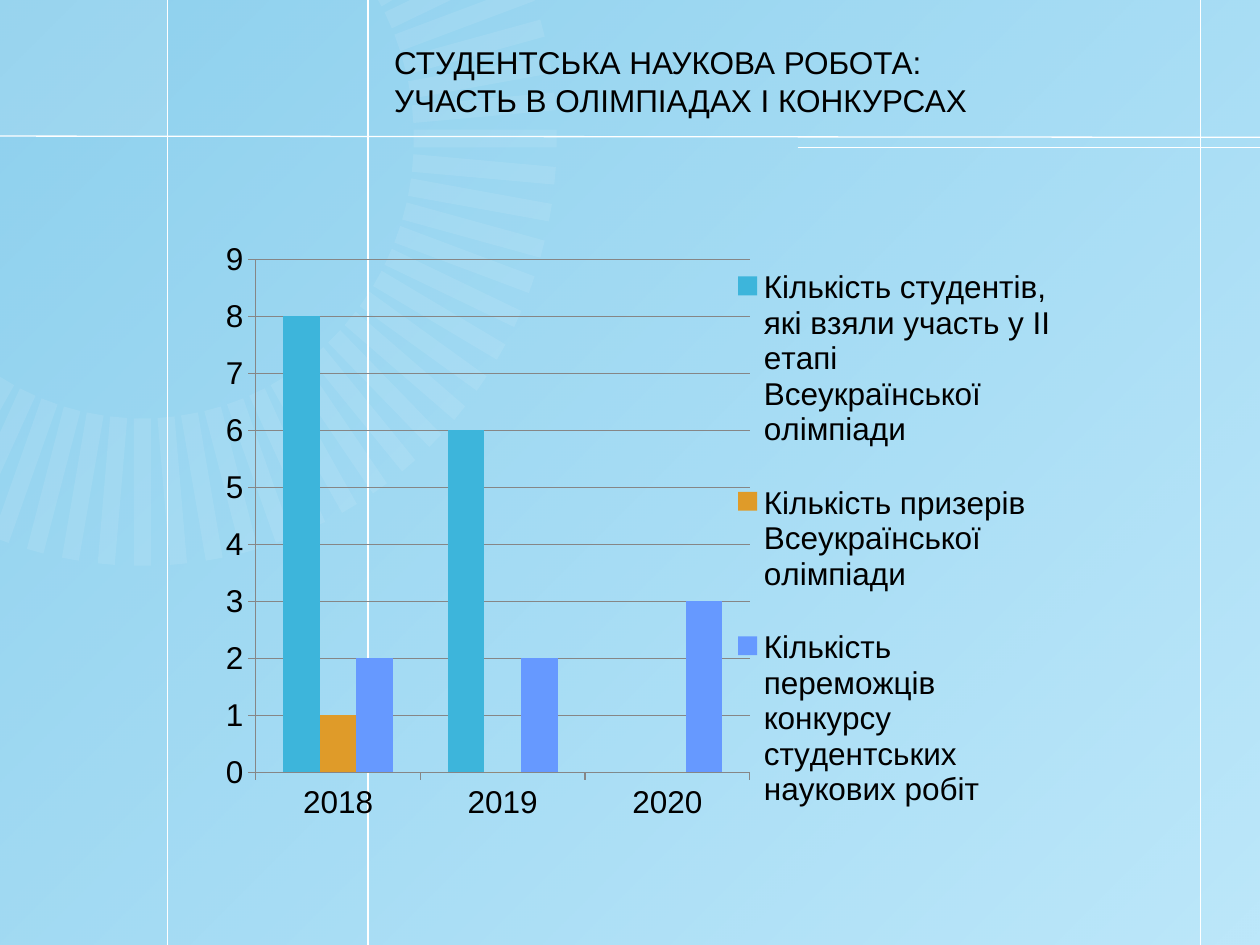
"""Build the slide on student olympiads and contests: rays, guide lines, title and column chart."""
from dataclasses import dataclass
from math import cos, radians, sin

from lxml import etree
from pptx import Presentation
from pptx import util as u
from pptx.chart.data import CategoryChartData
from pptx.dml.color import RGBColor
from pptx.enum import chart as ch
from pptx.enum import shapes as sh
from pptx.oxml import parse_xml
from pptx.oxml.ns import nsdecls, qn

Point = tuple[float, float]


@dataclass(frozen=True)
class Theme:
    sky: str = "BCE7FA"
    shade: str = "0F92CC"
    white: str = "FFFFFF"
    ray: str = "F2FAFE"
    ink: str = "000000"
    grid: str = "868686"
    font: str = "Arial"
    size: float = 18
    hairline: float = 0.75
    veil: int = 10


@dataclass(frozen=True)
class Guide:
    start: Point
    end: Point


@dataclass(frozen=True)
class Sunburst:
    center: Point = (1.13, 1.1)
    inner: float = 2.22
    outer: float = 3.39
    half_width: float = 0.07
    squeeze: float = 0.97
    angles: range = range(-30, 121, 5)


@dataclass(frozen=True)
class Measure:
    name: str
    counts: tuple[int, ...]
    color: str


@dataclass(frozen=True)
class Box:
    left: float
    top: float
    width: float
    height: float

    def lengths(self) -> list[int]:
        return [u.Inches(v) for v in (self.left, self.top, self.width, self.height)]


THEME = Theme()
WIDTH, HEIGHT = 10, 7.5
TITLE = "СТУДЕНТСЬКА НАУКОВА РОБОТА: УЧАСТЬ В ОЛІМПІАДАХ І КОНКУРСАХ"
TITLE_BOX = Box(3.03, 0.29, 5, 0.71)
CHART_BOX = Box(1.59, 1.84, 6.92, 4.97)
PLOT_BOX = Box(0.44, 0.22, 3.92, 4.07)
LEGEND_BOX = Box(4.35, 0, 2.49, 4.87)
GUIDES = [Guide((x, 0), (x, HEIGHT)) for x in (1.33, 9.53, 2.92)] + [
    Guide((0, 1.08), (WIDTH, 1.09)),
    Guide((6.33, 1.17), (WIDTH, 1.17)),
]
YEARS = ("2018", "2019", "2020")
MEASURES = (
    Measure("Кількість студентів, які взяли участь у ІІ етапі Всеукраїнської олімпіади", (8, 6, 0), "3DB5DB"),
    Measure("Кількість призерів Всеукраїнської олімпіади", (1, 0, 0), "DF9B29"),
    Measure("Кількість переможців конкурсу студентських наукових робіт", (2, 2, 3), "6699FF"),
)


def rgb(code: str) -> RGBColor:
    return RGBColor.from_string(code)


def set_alpha(color_element, percent: int) -> None:
    etree.SubElement(color_element, qn("a:alpha")).set("val", str(percent * 1000))


def style_veil(shape, color: str) -> None:
    shape.shadow.inherit = False
    shape.line.fill.background()
    shape.fill.solid()
    shape.fill.fore_color.rgb = rgb(color)
    for element in shape.fill._xPr.iter(qn("a:srgbClr")):
        set_alpha(element, THEME.veil)


def add_rect(slide, width: float, height: float):
    return slide.shapes.add_shape(sh.MSO_SHAPE.RECTANGLE, 0, 0, u.Inches(width), u.Inches(height))


def add_backdrop(slide) -> None:
    slide.background.fill.solid()
    slide.background.fill.fore_color.rgb = rgb(THEME.sky)
    shade = add_rect(slide, WIDTH, HEIGHT)
    shade.shadow.inherit = False
    shade.line.fill.background()
    shade.fill.gradient()
    shade.fill.gradient_angle = 315
    for stop in shade.fill.gradient_stops:
        stop.color.rgb = rgb(THEME.shade)
    for element, percent in zip(shade.fill._xPr.iter(qn("a:srgbClr")), (27, 0)):
        set_alpha(element, percent)
    style_veil(add_rect(slide, 1.33, 1.08), THEME.white)


def add_guide(slide, guide: Guide) -> None:
    ends = [u.Inches(v) for v in (*guide.start, *guide.end)]
    line = slide.shapes.add_connector(sh.MSO_CONNECTOR.STRAIGHT, *ends)
    line.line.color.rgb = rgb(THEME.white)
    line.line.width = u.Pt(THEME.hairline)
    etree.SubElement(line._element.spPr, qn("a:effectLst"))


def clip(outline: list[Point], axis: int) -> list[Point]:
    kept = []
    for a, b in zip(outline, outline[1:] + outline[:1]):
        if a[axis] >= 0:
            kept.append(a)
        if (a[axis] >= 0) != (b[axis] >= 0):
            t = a[axis] / (a[axis] - b[axis])
            kept.append((a[0] + t * (b[0] - a[0]), a[1] + t * (b[1] - a[1])))
    return kept


def add_ray(slide, burst: Sunburst, angle: int) -> None:
    c, s, w = cos(radians(angle)), sin(radians(angle)), burst.half_width
    corners = ((burst.inner, -w), (burst.outer, -w), (burst.outer, w), (burst.inner, w))
    outline = [
        (burst.center[0] + burst.squeeze * (r * c - d * s), burst.center[1] + r * s + d * c)
        for r, d in corners
    ]
    points = [(u.Inches(x), u.Inches(y)) for x, y in clip(clip(outline, 0), 1)]
    builder = slide.shapes.build_freeform(*points[0])
    builder.add_line_segments(points[1:], close=True)
    style_veil(builder.convert_to_shape(), THEME.ray)


def set_layout(parent, position: int, box: Box, target: str = "") -> None:
    for old in parent.findall(qn("c:layout")):
        parent.remove(old)
    shares = (box.left / CHART_BOX.width, box.top / CHART_BOX.height,
              box.width / CHART_BOX.width, box.height / CHART_BOX.height)
    modes = '<c:xMode val="edge"/><c:yMode val="edge"/>'
    values = "".join(f'<c:{k} val="{v:.4f}"/>' for k, v in zip("xywh", shares))
    parent.insert(position, parse_xml(
        f'<c:layout {nsdecls("c")}><c:manualLayout>{target}{modes}{values}</c:manualLayout></c:layout>'
    ))


def style_line(line) -> None:
    line.color.rgb = rgb(THEME.grid)
    line.width = u.Pt(THEME.hairline)


def style_font(font) -> None:
    font.name = THEME.font
    font.size = u.Pt(THEME.size)
    font.color.rgb = rgb(THEME.ink)


def add_results_chart(slide) -> None:
    data = CategoryChartData()
    data.categories = YEARS
    for measure in MEASURES:
        data.add_series(measure.name, measure.counts)
    chart = slide.shapes.add_chart(ch.XL_CHART_TYPE.COLUMN_CLUSTERED, *CHART_BOX.lengths(), data).chart
    style_font(chart.font)
    chart.has_title = False
    plot = chart.plots[0]
    plot.vary_by_categories = False
    plot.gap_width, plot.overlap = 150, 0
    for series, measure in zip(plot.series, MEASURES):
        series.format.fill.solid()
        series.format.fill.fore_color.rgb = rgb(measure.color)
    for axis in (chart.category_axis, chart.value_axis):
        axis.major_tick_mark = ch.XL_TICK_MARK.OUTSIDE
        style_line(axis.format.line)
    counts = chart.value_axis
    counts.minimum_scale, counts.maximum_scale, counts.major_unit = 0, 9, 1
    style_line(counts.major_gridlines.format.line)
    chart.has_legend = True
    chart.legend.position = ch.XL_LEGEND_POSITION.RIGHT
    chart.legend.include_in_layout = False
    set_layout(chart.legend._element, 1, LEGEND_BOX)
    set_layout(chart._chartSpace.chart.plotArea, 0, PLOT_BOX, '<c:layoutTarget val="inner"/>')


def add_title(slide) -> None:
    frame = slide.shapes.add_textbox(*TITLE_BOX.lengths()).text_frame
    frame.word_wrap = True
    frame.text = TITLE
    style_font(frame.paragraphs[0].font)


def main() -> None:
    deck = Presentation()
    deck.slide_width, deck.slide_height = u.Inches(WIDTH), u.Inches(HEIGHT)
    slide = deck.slides.add_slide(deck.slide_layouts[6])
    add_backdrop(slide)
    for guide in GUIDES:
        add_guide(slide, guide)
    burst = Sunburst()
    for angle in burst.angles:
        add_ray(slide, burst, angle)
    add_results_chart(slide)
    add_title(slide)
    deck.save("out.pptx")


if __name__ == "__main__":
    main()
